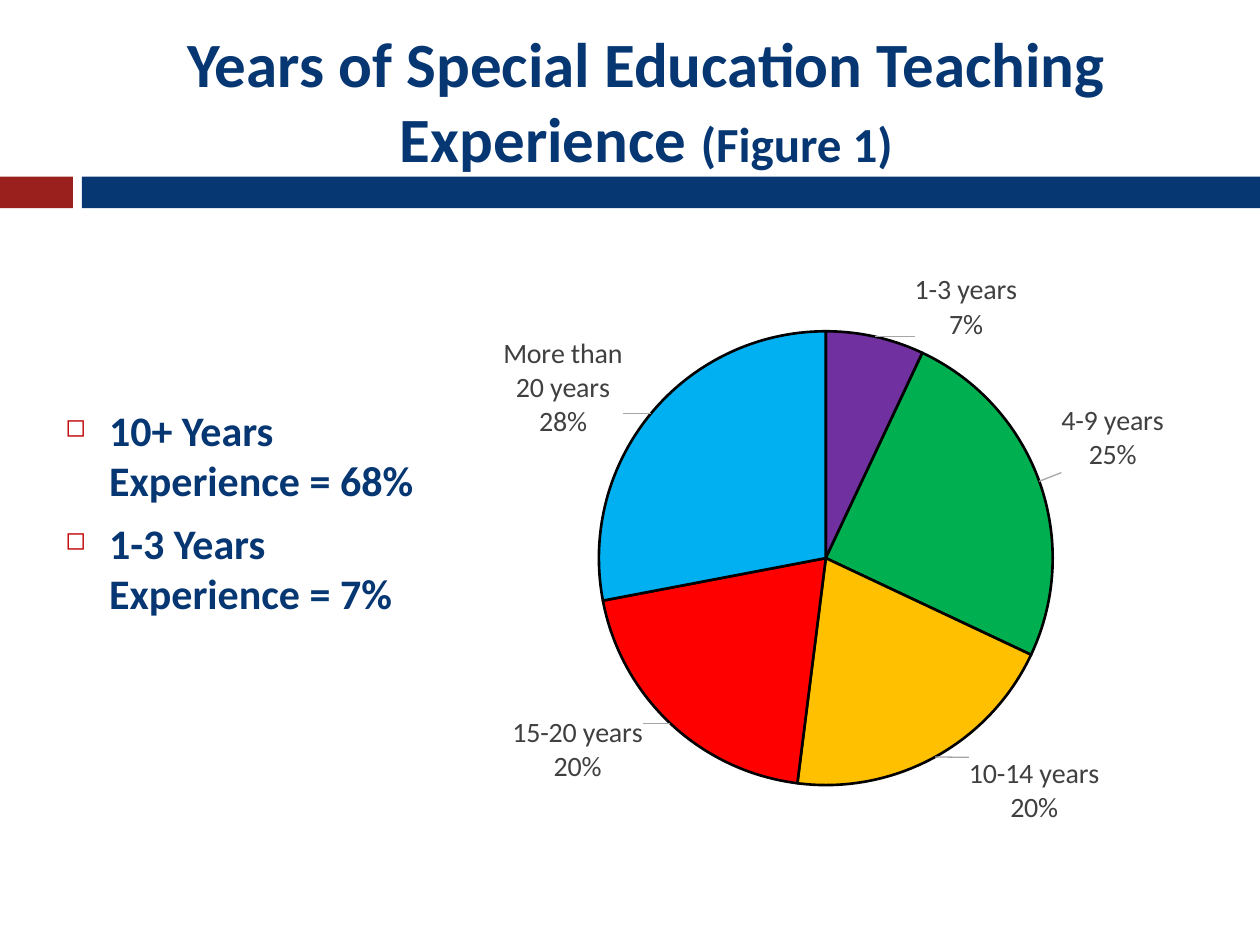
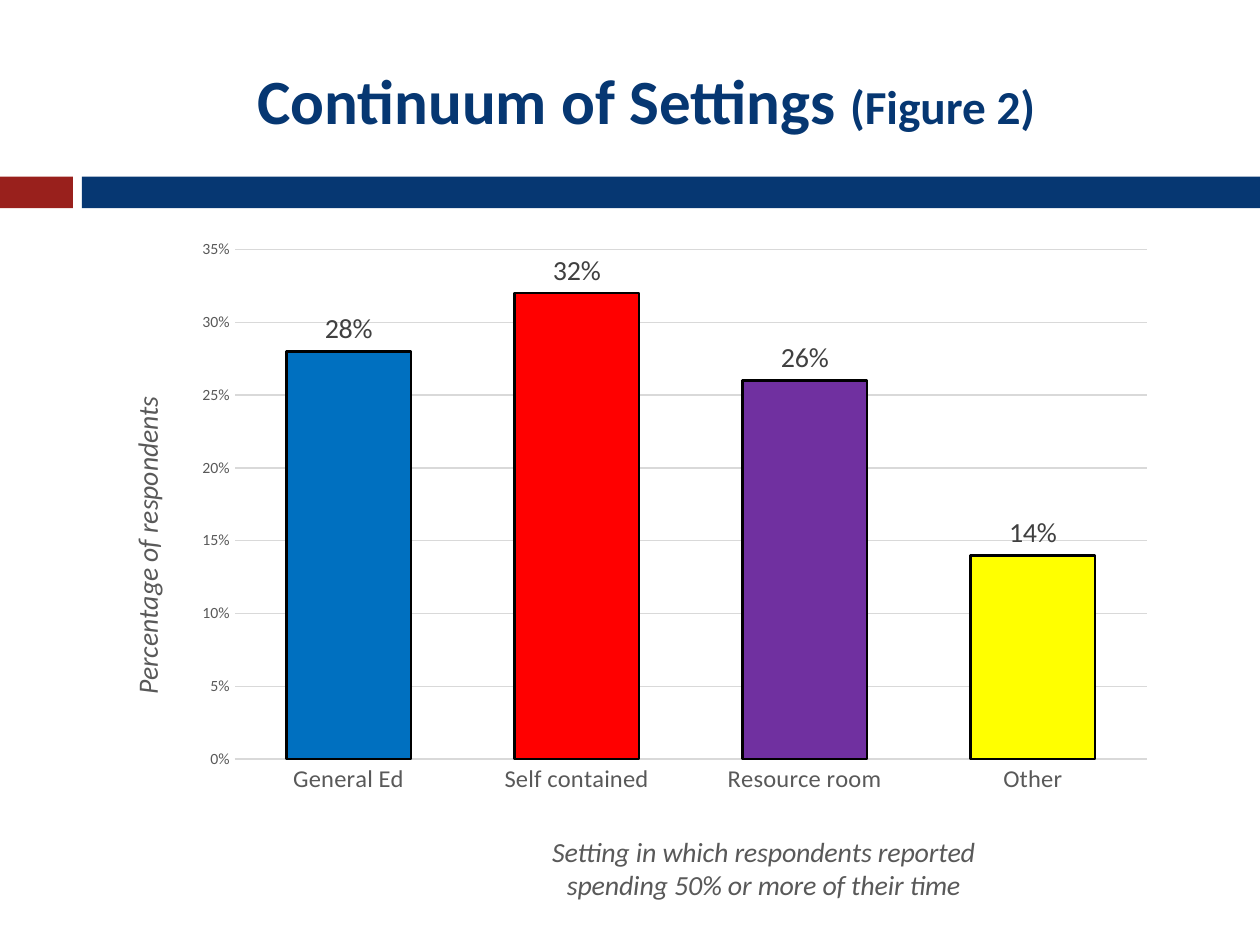
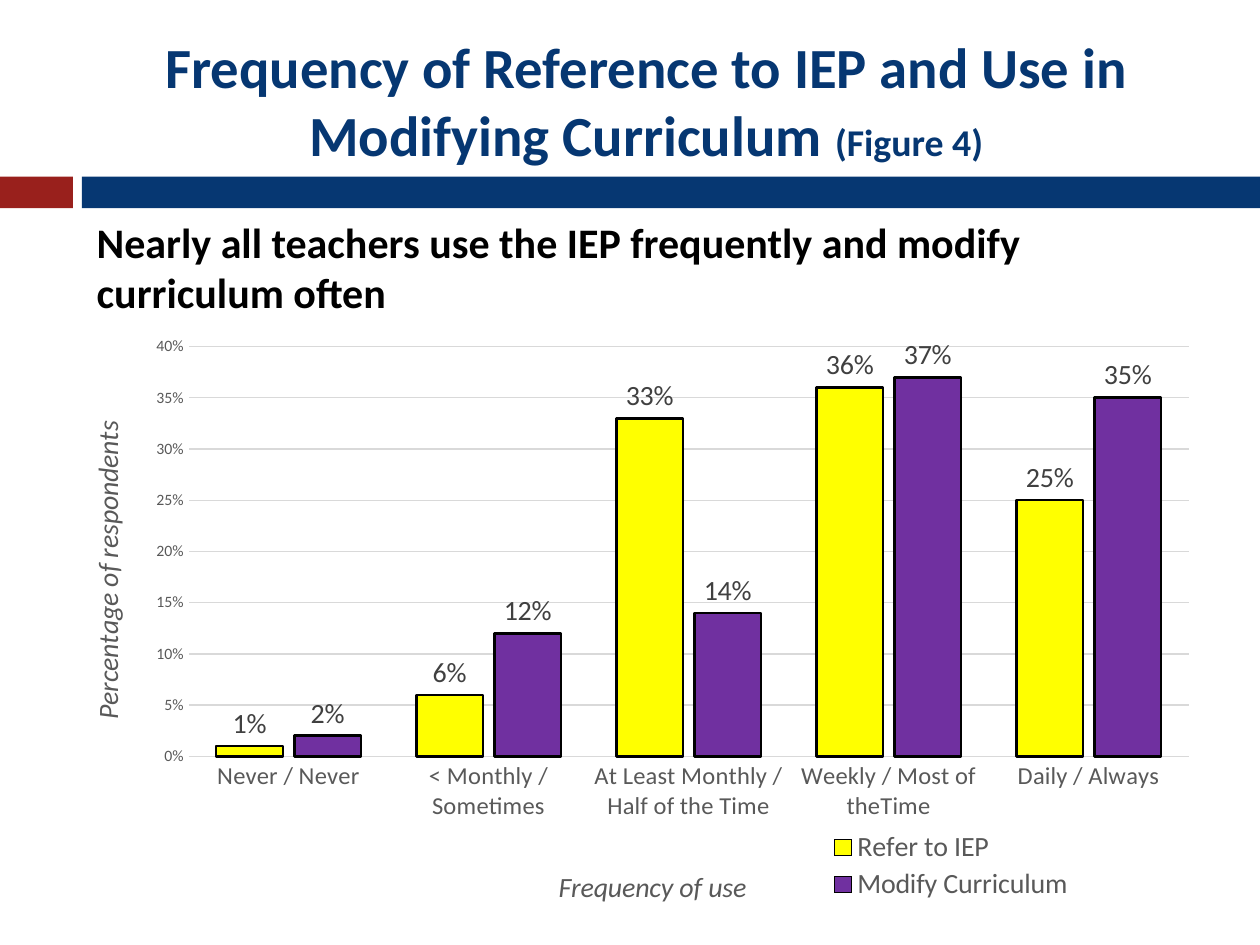
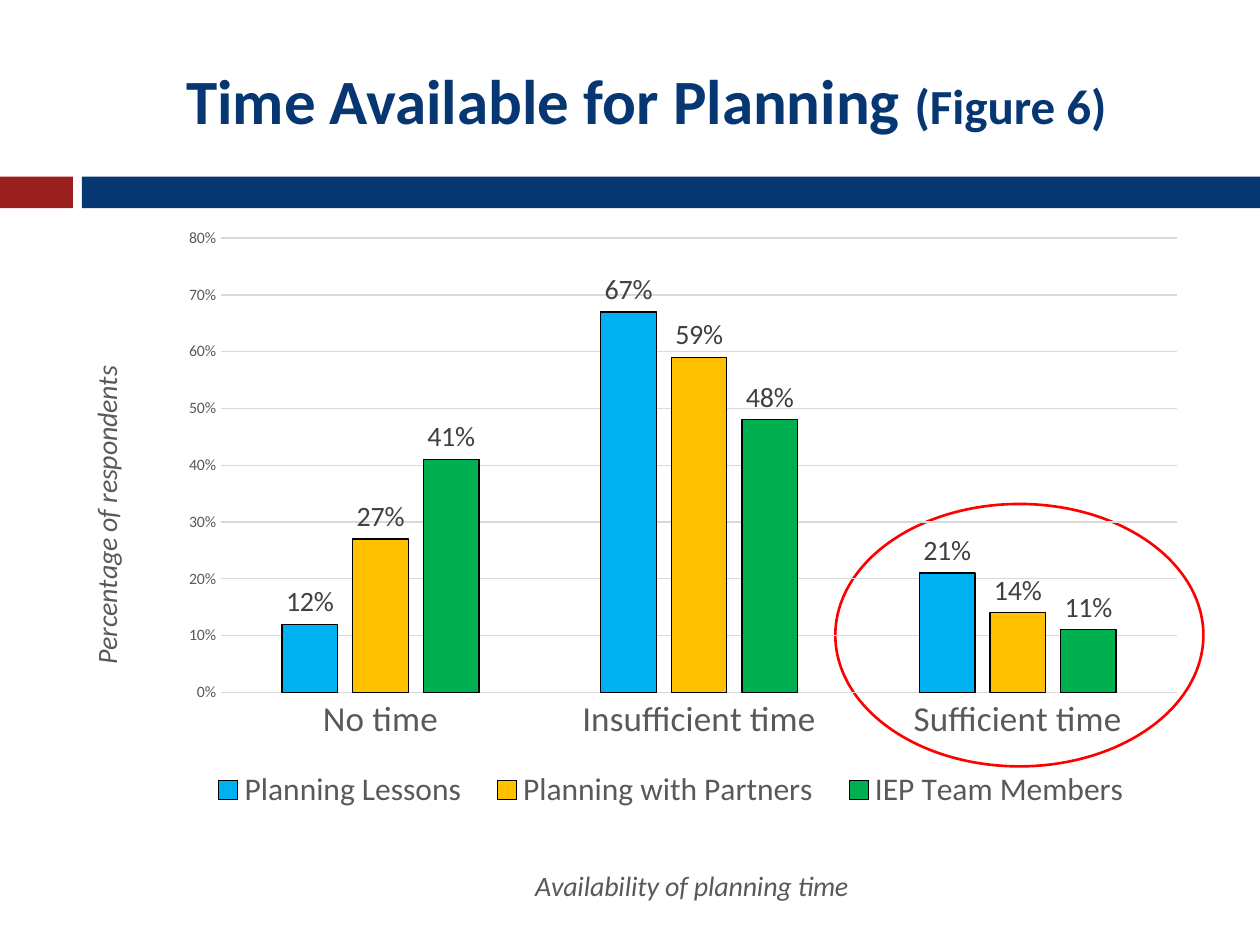
from pptx import Presentation
from pptx import util as u
from pptx.chart import data as chart_data
from pptx.dml import color
from pptx.enum import chart as kinds, shapes, text
from pptx.oxml import parse_xml
from pptx.oxml import ns

FONT = "Calibri"
NAVY, BRICK, BLACK, RED = "063772", "99201C", "000000", "FF0000"
GREY, LABEL_GREY, GRID_GREY = "595959", "404040", "D9D9D9"
PURPLE, GREEN, GOLD, SKY = "7030A0", "00B050", "FFC000", "00B0F0"
BLUE, YELLOW = "0070C0", "FFFF00"


def rgb(code):
    """Turn a hex string into a colour."""
    return color.RGBColor.from_string(code)


def cm(frame):
    """Turn centimetre numbers into lengths."""
    return [u.Cm(value) for value in frame]


def style(font, size, code, bold=False, italic=False):
    """Set the face, size, colour and weight of a font."""
    font.name, font.size = FONT, u.Pt(size)
    font.bold, font.italic = bold, italic
    font.color.rgb = rgb(code)


def outline(line, code, width):
    """Give a line its colour and width."""
    line.color.rgb = rgb(code)
    line.width = u.Pt(width)


def xml(markup):
    """Parse a chart or drawing element whose first tag lacks namespaces."""
    tag, rest = markup.split(">", 1)
    closing = "/" if tag.endswith("/") else ""
    return parse_xml(f"{tag.rstrip('/')} {ns.nsdecls('a', 'c')}{closing}>{rest}")


def add_shape(page, kind, frame, fill=None):
    """Add a plain preset shape without shadow or line."""
    shape = page.shapes.add_shape(kind, *cm(frame))
    shape.shadow.inherit = False
    shape.line.fill.background()
    if fill:
        shape.fill.solid()
        shape.fill.fore_color.rgb = rgb(fill)
    else:
        shape.fill.background()
    return shape


def add_text(page, frame):
    """Add a wrapping text box."""
    box = page.shapes.add_textbox(*cm(frame))
    box.text_frame.word_wrap = True
    return box.text_frame


def add_page(deck, title, figure, size=36, figure_size=28):
    """Add a slide with its two bands and its title."""
    page = deck.slides.add_slide(deck.slide_layouts[6])
    add_shape(page, shapes.MSO_SHAPE.RECTANGLE, (0, 3.56, 1.47, 0.64), BRICK)
    add_shape(page, shapes.MSO_SHAPE.RECTANGLE, (1.65, 3.56, 23.75, 0.64), NAVY)
    frame = add_text(page, (1.7, 0.64, 22.66, 2.74))
    frame.vertical_anchor = text.MSO_ANCHOR.MIDDLE
    para = frame.paragraphs[0]
    para.alignment = text.PP_ALIGN.CENTER
    for words, points in ((title + " ", size), (f"(Figure {figure})", figure_size)):
        span = para.add_run()
        span.text = words
        style(span.font, points, NAVY, bold=True)
    return page


def add_bullets(page, frame, items):
    """Add a list with small red square bullets."""
    body = add_text(page, frame)
    body.text = "\n".join(items)
    for number, para in enumerate(body.paragraphs):
        if number:
            para.space_before = u.Pt(7)
        props = para._p.get_or_add_pPr()
        props.set("marL", str(u.Cm(0.88)))
        props.set("indent", str(u.Cm(-0.88)))
        props.append(xml('<a:buClr><a:srgbClr val="C00000"/></a:buClr>'))
        props.append(xml('<a:buSzPct val="60000"/>'))
        props.append(xml('<a:buChar char="◻"/>'))
        style(para.runs[0].font, 24, NAVY, bold=True)


def set_layout(host, index, x, y, width=None, height=None, offset=False):
    """Place a chart part by fractions of the chart."""
    for old in host.findall(ns.qn("c:layout")):
        host.remove(old)
    inner = '<c:layoutTarget val="inner"/>' if index == 0 else ""
    modes = "" if offset else '<c:xMode val="edge"/><c:yMode val="edge"/>'
    size = f'<c:w val="{width}"/><c:h val="{height}"/>' if width else ""
    host.insert(index, xml(
        f'<c:layout><c:manualLayout>{inner}{modes}<c:x val="{x}"/><c:y val="{y}"/>'
        f"{size}</c:manualLayout></c:layout>"))


def add_chart(page, kind, frame, categories, series, plot_area):
    """Add a transparent chart with a fixed plot area."""
    data = chart_data.CategoryChartData(number_format="0%")
    data.categories = categories
    for name, values in series:
        data.add_series(name, values)
    chart = page.shapes.add_chart(kind, *cm(frame), data).chart
    chart.has_title = chart.has_legend = False
    style(chart.font, 10, BLACK)
    clear = "<c:spPr><a:noFill/><a:ln><a:noFill/></a:ln></c:spPr>"
    chart.element.find(ns.qn("c:chart")).addnext(xml(clear))
    area = chart.element.xpath(".//c:plotArea")[0]
    area.append(xml(clear))
    set_layout(area, 0, *plot_area)
    return chart


def paint(part, fill, width):
    """Fill a series or a point and outline it in black."""
    part.format.fill.solid()
    part.format.fill.fore_color.rgb = rgb(fill)
    outline(part.format.line, BLACK, width)


def paint_points(series, fills):
    """Give each point of a series its own fill."""
    for number, fill in enumerate(fills):
        paint(series.points[number], fill, 1.5)


def label_values(series):
    """Show the percentages outside the ends of a series."""
    labels = series.data_labels
    labels.show_value = True
    labels.number_format, labels.number_format_is_linked = "0%", False
    labels.position = kinds.XL_LABEL_POSITION.OUTSIDE_END
    style(labels.font, 16, LABEL_GREY)


def title_axis(axis, words, place, turned=False):
    """Give an axis its italic title at a fixed place."""
    title = axis.axis_title
    title.text_frame.text = words
    for para in title.text_frame.paragraphs:
        for span in para.runs:
            style(span.font, 16, GREY, italic=True)
    if turned:
        body = title.element.xpath(".//a:bodyPr")[0]
        body.set("rot", "-5400000")
        body.set("vert", "horz")
    set_layout(title.element, 1, *place)


def add_columns(page, frame, categories, series, plot_area, top, step, gap,
                overlap, titles, category_size=14):
    """Add a column chart with percentage axis, labels and axis titles."""
    chart = add_chart(page, kinds.XL_CHART_TYPE.COLUMN_CLUSTERED, frame,
                      categories, series, plot_area)
    plot = chart.plots[0]
    plot.gap_width, plot.overlap, plot.vary_by_categories = gap, overlap, False
    for item in plot.series:
        item.invert_if_negative = False
        label_values(item)
    across, upward = chart.category_axis, chart.value_axis
    for axis, size in ((across, category_size), (upward, 9)):
        axis.major_tick_mark = axis.minor_tick_mark = kinds.XL_TICK_MARK.NONE
        style(axis.tick_labels.font, size, GREY)
    outline(across.format.line, GRID_GREY, 0.75)
    upward.minimum_scale, upward.maximum_scale, upward.major_unit = 0, top, step
    upward.tick_labels.number_format = "0%"
    upward.tick_labels.number_format_is_linked = False
    upward.format.line.fill.background()
    outline(upward.major_gridlines.format.line, GRID_GREY, 0.75)
    words, across_place, upward_place = titles
    title_axis(across, words, across_place)
    title_axis(upward, "Percentage of respondents", upward_place, turned=True)
    return chart


def add_legend(chart, size, place):
    """Add a legend at a fixed place."""
    chart.has_legend = True
    chart.legend.position = kinds.XL_LEGEND_POSITION.BOTTOM
    chart.legend.include_in_layout = False
    style(chart.legend.font, size, GREY)
    set_layout(chart.element.xpath(".//c:legend")[0], 1, *place)


def label_slices(series, offsets, wrapped):
    """Label pie slices with category and value, moved by offsets."""
    label_values(series)
    for number, offset in enumerate(offsets):
        label = series.points[number].data_label
        if number in wrapped:
            label.text_frame.text = wrapped[number]
            for para in label.text_frame.paragraphs:
                style(para.runs[0].font, 16, LABEL_GREY)
        else:
            style(label.font, 16, LABEL_GREY)
        label.position = kinds.XL_LABEL_POSITION.OUTSIDE_END
    labels = series.data_labels._element
    for node, offset in zip(labels.findall(ns.qn("c:dLbl")), offsets):
        node.find(ns.qn("c:showCatName")).set("val", "1")
        node.append(xml("<c:separator>\n</c:separator>"))
        set_layout(node, 1, *offset, offset=True)
    labels.append(xml(
        '<c:leaderLines><c:spPr><a:ln w="9525"><a:solidFill><a:srgbClr val="A6A6A6"/>'
        "</a:solidFill></a:ln></c:spPr></c:leaderLines>"))


def experience_page(deck):
    """Build the slide on teaching experience."""
    page = add_page(deck, "Years of Special Education Teaching Experience", 1)
    add_bullets(page, (1.07, 8.03, 8.03, 5.94),
                ["10+ Years Experience = 68%", "1-3 Years Experience = 7%"])
    chart = add_chart(
        page, kinds.XL_CHART_TYPE.PIE, (9.09, 4.88, 15.27, 12.5),
        ["1-3 years", "4-9 years", "10-14 years", "15-20 years", "More than 20 years"],
        [("Series 1", (0.07, 0.25, 0.2, 0.2, 0.28))], (0.195, 0.144, 0.6, 0.732))
    slices = chart.plots[0].series[0]
    paint_points(slices, (PURPLE, GREEN, GOLD, RED, SKY))
    label_slices(
        slices,
        ((0.05, 0.02), (0.02, -0.01), (0.04, -0.01), (-0.03, -0.02), (-0.03, 0.05)),
        {4: "More than\n20 years\n28%"})


def settings_page(deck):
    """Build the slide on teaching settings."""
    page = add_page(deck, "Continuum of Settings", 2, figure_size=27)
    chart = add_columns(
        page, (1.7, 4.57, 22.43, 13.77),
        ["General Ed", "Self contained", "Resource room", "Other"],
        [("Series 1", (0.28, 0.32, 0.26, 0.14))], (0.135, 0.034, 0.82, 0.756),
        0.35, 0.05, 83, 0,
        ("Setting in which respondents reported\nspending 50% or more of their time",
         (0.417, 0.895), (0.035, 0.25)))
    paint_points(chart.plots[0].series[0], (BLUE, RED, PURPLE, YELLOW))


def frequency_page(deck):
    """Build the slide on how often the plan is used."""
    page = add_page(deck, "Frequency of Reference to IEP and Use in Modifying Curriculum",
                    4, 32.4, 21.6)
    body = add_text(page, (1.7, 4.24, 22.86, 13.34))
    body.text = "Nearly all teachers use the IEP frequently and modify \vcurriculum often"
    for span in body.paragraphs[0].runs:
        style(span.font, 24, BLACK, bold=True)
    chart = add_columns(
        page, (0.84, 6.35, 23.5, 12.07),
        ["Never / Never", "< Monthly / Sometimes", "At Least Monthly / Half of the Time",
         "Weekly / Most of theTime", "Daily / Always"],
        [("Refer to IEP", (0.01, 0.06, 0.33, 0.36, 0.25)),
         ("Modify Curriculum", (0.02, 0.12, 0.14, 0.37, 0.35))],
        (0.126, 0.053, 0.858, 0.688), 0.4, 0.05, 83, -17,
        ("Frequency of use", (0.439, 0.92), (0.036, 0.172)))
    for series, fill in zip(chart.plots[0].series, (YELLOW, PURPLE)):
        paint(series, fill, 1.5)
    add_legend(chart, 16, (0.67, 0.86, 0.22, 0.13))


def planning_page(deck):
    """Build the slide on planning time."""
    page = add_page(deck, "Time Available for Planning", 6)
    ring = add_shape(page, shapes.MSO_SHAPE.OVAL, (16.84, 10.16, 7.42, 5.29))
    outline(ring.line, RED, 1.5)
    chart = add_columns(
        page, (0.84, 4.11, 23.5, 14.4),
        ["No time", "Insufficient time", "Sufficient time"],
        [("Planning Lessons", (0.12, 0.67, 0.21)),
         ("Planning with Partners", (0.27, 0.59, 0.14)),
         ("IEP Team Members", (0.41, 0.48, 0.11))],
        (0.154, 0.048, 0.82, 0.636), 0.8, 0.1, 219, -27,
        ("Availability of planning time", (0.419, 0.921), (0.035, 0.22)), 20)
    for series, fill in zip(chart.plots[0].series, (SKY, GOLD, GREEN)):
        paint(series, fill, 0.75)
    add_legend(chart, 18, (0.13, 0.78, 0.82, 0.08))


def main():
    """Build the deck and save it."""
    deck = Presentation()
    deck.slide_width, deck.slide_height = u.Cm(25.4), u.Cm(19.05)
    experience_page(deck)
    settings_page(deck)
    frequency_page(deck)
    planning_page(deck)
    deck.save("out.pptx")


if __name__ == "__main__":
    main()
